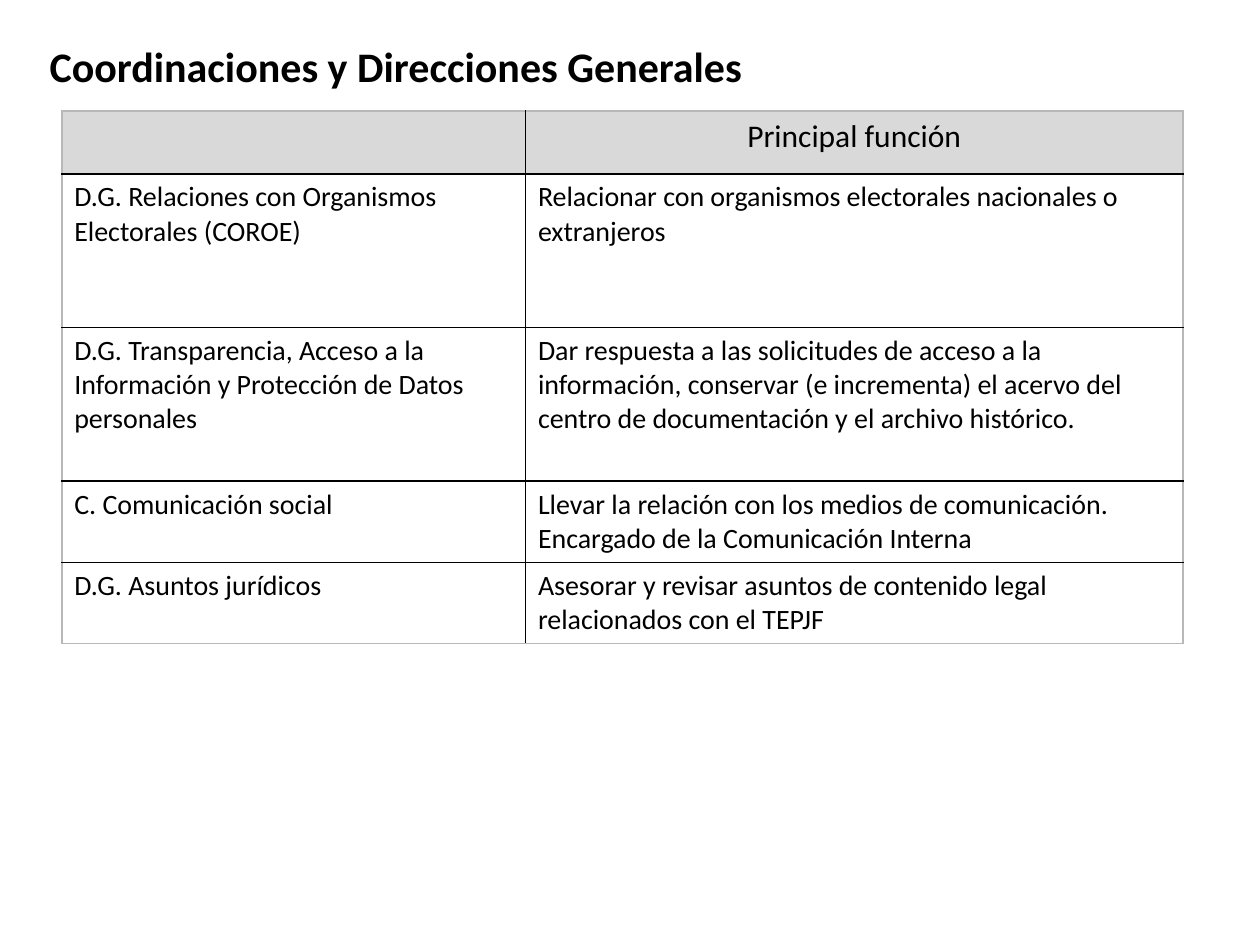
from pptx import Presentation
from pptx import util as u
from pptx.dml.color import RGBColor
from pptx.enum import shapes, text
from pptx.oxml.ns import qn
from lxml import etree

BLACK = RGBColor(0x00, 0x00, 0x00)
WHITE = RGBColor(0xFF, 0xFF, 0xFF)
HEADER_GRAY = RGBColor(0xD9, 0xD9, 0xD9)
EDGE_GRAY = RGBColor(0xB8, 0xB8, 0xB8)
FONT = "Calibri"

COLUMN_WIDTHS = [3.68, 5.22]
ROW_HEIGHTS = [0.5, 1.22, 1.22, 0.63, 0.63]
ROWS = [
    ("", "Principal función"),
    ("D.G. Relaciones con Organismos Electorales (COROE)",
     "Relacionar con organismos electorales nacionales o extranjeros"),
    ("D.G. Transparencia, Acceso a la Información y Protección de Datos personales",
     "Dar respuesta a las solicitudes de acceso a la información, conservar "
     "(e incrementa) el acervo del centro de documentación y el archivo histórico."),
    ("C. Comunicación social",
     "Llevar la relación con los medios de comunicación.\n"
     "Encargado de la Comunicación Interna"),
    ("D.G. Asuntos jurídicos",
     "Asesorar y revisar asuntos de contenido legal relacionados con el TEPJF"),
]


def write(frame, content, size=16, bold=False, align=text.PP_ALIGN.LEFT, spacing=None):
    """Fill a text frame, one paragraph per line of content."""
    frame.text = content
    for paragraph in frame.paragraphs:
        paragraph.alignment = align
        paragraph.line_spacing = spacing
        font = paragraph.font
        font.name, font.size, font.bold = FONT, u.Pt(size), bold
        font.color.rgb = BLACK
        for run in paragraph.runs:
            run.font.name, run.font.size, run.font.bold = FONT, u.Pt(size), bold
            run.font.color.rgb = BLACK


def add_title(slide, content):
    title = slide.shapes.add_shape(
        shapes.MSO_SHAPE.ROUNDED_RECTANGLE,
        u.Inches(0.27), u.Inches(0.29), u.Inches(7.35), u.Inches(0.51))
    title.shadow.inherit = False
    title.fill.background()
    title.line.fill.background()
    frame = title.text_frame
    frame.word_wrap = True
    frame.vertical_anchor = text.MSO_ANCHOR.MIDDLE
    write(frame, content, size=24, bold=True, spacing=0.9)


def add_border(cell, side, color, width):
    line = etree.SubElement(cell._tc.get_or_add_tcPr(), qn("a:ln" + side), w=str(u.Pt(width)))
    fill = etree.SubElement(line, qn("a:solidFill"))
    etree.SubElement(fill, qn("a:srgbClr"), val=str(color))


def style_cell(cell, row, column):
    """Gray outer edges, black inner rules, and a gray header row."""
    outer = {
        "L": column == 0,
        "R": column == len(COLUMN_WIDTHS) - 1,
        "T": row == 0,
        "B": row == len(ROW_HEIGHTS) - 1,
    }
    for side, is_outer in outer.items():
        add_border(cell, side, EDGE_GRAY if is_outer else BLACK, 1)
    cell.fill.solid()
    cell.fill.fore_color.rgb = HEADER_GRAY if row == 0 else WHITE


def add_functions_table(slide):
    table = slide.shapes.add_table(
        len(ROWS), len(COLUMN_WIDTHS), u.Inches(0.49), u.Inches(0.88),
        u.Inches(sum(COLUMN_WIDTHS)), u.Inches(sum(ROW_HEIGHTS))).table
    table.first_row = table.horz_banding = False
    for column, width in zip(table.columns, COLUMN_WIDTHS):
        column.width = u.Inches(width)
    for r, (height, entries) in enumerate(zip(ROW_HEIGHTS, ROWS)):
        table.rows[r].height = u.Inches(height)
        for c, entry in enumerate(entries):
            cell = table.cell(r, c)
            style_cell(cell, r, c)
            if r == 0:
                write(cell.text_frame, entry, size=18, align=text.PP_ALIGN.CENTER)
            else:
                write(cell.text_frame, entry)


def main():
    deck = Presentation()
    deck.slide_width, deck.slide_height = u.Inches(10), u.Inches(7.5)
    slide = deck.slides.add_slide(deck.slide_layouts[6])
    add_title(slide, "Coordinaciones y Direcciones Generales")
    add_functions_table(slide)
    deck.save("out.pptx")


if __name__ == "__main__":
    main()
